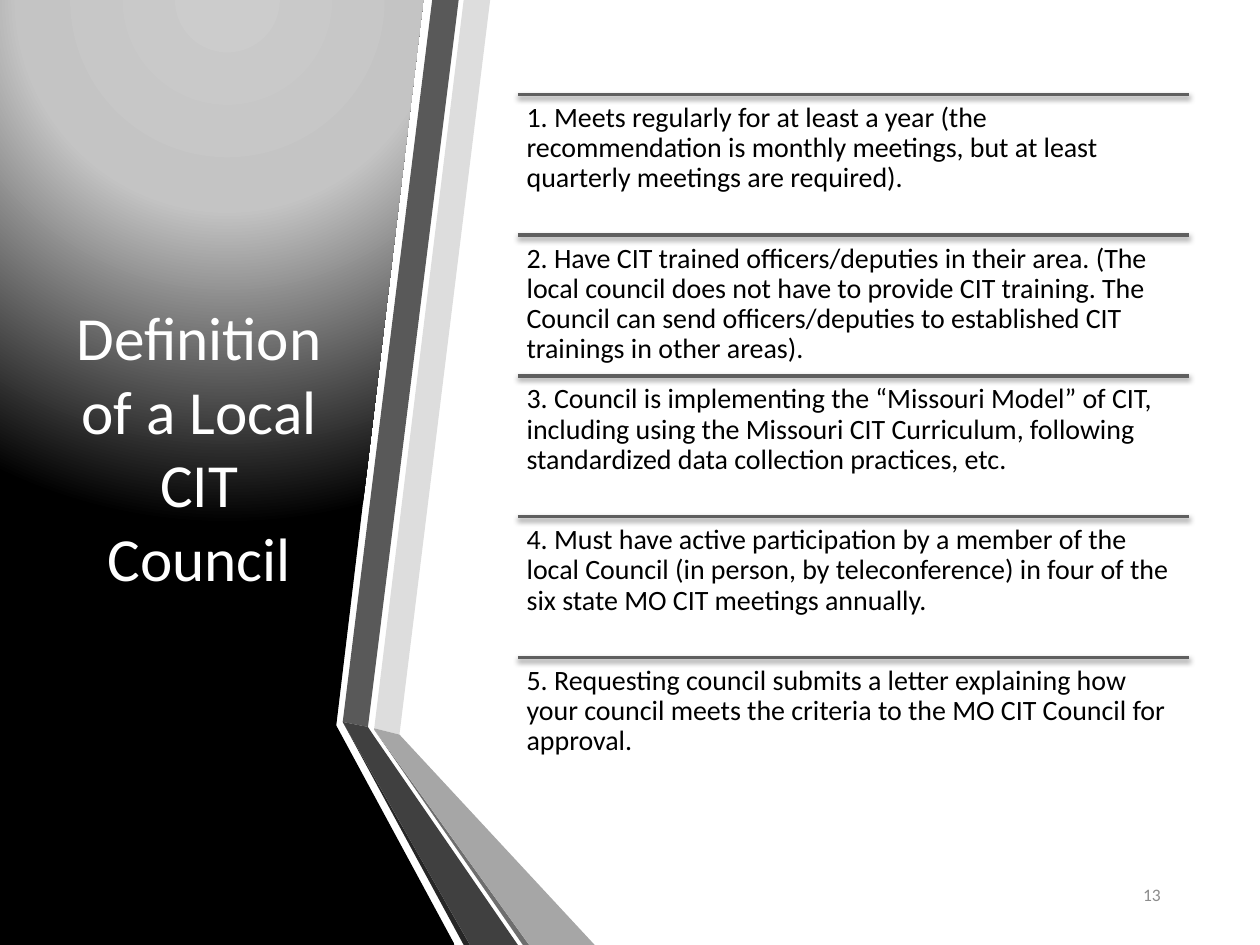
from pptx import Presentation
from pptx.dml.color import RGBColor as Rgb
from pptx.enum.shapes import MSO_CONNECTOR as Link
from pptx.enum.text import MSO_ANCHOR as Anchor, PP_ALIGN as Align
from pptx.oxml import parse_xml
from pptx.oxml.ns import nsdecls
from pptx.util import Inches, Pt

TITLE = "Definition of a Local CIT Council"
ITEMS = [
    "1. Meets regularly for at least a year (the recommendation is monthly meetings, "
    "but at least quarterly meetings are required).",
    "2. Have CIT trained officers/deputies in their area. (The local council does not "
    "have to provide CIT training. The Council can send officers/deputies to "
    "established CIT trainings in other areas).",
    "3. Council is implementing the “Missouri Model” of CIT, including using the "
    "Missouri CIT Curriculum, following standardized data collection practices, etc.",
    "4. Must have active participation by a member of the local Council (in person, by "
    "teleconference) in four of the six state MO CIT meetings annually.",
    "5. Requesting council submits a letter explaining how your council meets the "
    "criteria to the MO CIT Council for approval.",
]
PAGE = "13"

WIDE, HIGH = 10, 7.5
LEFT, TOP, SPAN, ROW = 4.11, 0.75, 5.33, 1.117
UNIT = Inches(0.01)
END = 750

PANEL = [(264, 0), (336, 0), (267, 575), (267, 576), (361, END), (0, END), (0, 0)]
BANDS = [
    ("DDDDDD", [(297, 578), (317, 583), (389, 0), (368, 0)]),
    ("595959", [(364, 0), (343, 0), (272, 573), (292, 577)]),
    ("262626", [(272, 573), (368, END), (373, END)]),
    ("6E6E6E", [(297, 579), (415, END), (420, END)]),
    ("A6A6A6", [(297, 579), (420, END), (472, END), (317, 583), (297, 578)]),
    ("404040", [(411, END), (296, 583), (292, 577), (272, 573), (373, END)]),
]
STOPS = [(0, "CCCCCC"), (40, "C4C4C4"), (100, "000000")]


def tint(color):
    return Rgb.from_string(color)


def draw(shapes, points, color):
    pen = shapes.build_freeform(*points[0], scale=UNIT)
    pen.add_line_segments(points[1:], close=True)
    form = pen.convert_to_shape()
    form.shadow.inherit = False
    form.fill.solid()
    form.fill.fore_color.rgb = tint(color)
    form.line.fill.background()
    return form


def glow(form):
    stops = "".join(
        f'<a:gs pos="{at * 1000}"><a:srgbClr val="{color}"/></a:gs>' for at, color in STOPS
    )
    fill = parse_xml(
        f'<a:gradFill {nsdecls("a")} rotWithShape="1"><a:gsLst>{stops}</a:gsLst>'
        '<a:path path="circle"><a:fillToRect l="50000" t="-80000" r="50000" b="180000"/>'
        "</a:path></a:gradFill>"
    )
    props = form.fill._xPr
    props.replace(props.find("{*}solidFill"), fill)


def write(shapes, box, text, size, color, align=Align.LEFT, anchor=Anchor.TOP, inset=None):
    frame = shapes.add_textbox(*map(Inches, box)).text_frame
    frame.word_wrap = True
    frame.vertical_anchor = anchor
    if inset is not None:
        frame.margin_left = frame.margin_right = Inches(inset)
        frame.margin_top = frame.margin_bottom = Inches(inset)
    para = frame.paragraphs[0]
    para.text = text
    para.alignment = align
    font = para.runs[0].font
    font.name, font.size, font.color.rgb = "Calibri", Pt(size), tint(color)
    return para


def rule(shapes, y):
    line = shapes.add_connector(Link.STRAIGHT, *map(Inches, (LEFT, y, LEFT + SPAN, y)))
    line.line.color.rgb = tint("5F5F5F")
    line.line.width = Pt(2)
    line._element.spPr.append(parse_xml(
        f'<a:effectLst {nsdecls("a")}><a:outerShdw blurRad="{Pt(3.1)}" dist="{Pt(1.6)}" '
        'dir="5400000" rotWithShape="0"><a:srgbClr val="000000"><a:alpha val="38000"/>'
        "</a:srgbClr></a:outerShdw></a:effectLst>"
    ))


def main():
    deck = Presentation()
    deck.slide_width, deck.slide_height = Inches(WIDE), Inches(HIGH)
    shapes = deck.slides.add_slide(deck.slide_layouts[6]).shapes

    glow(draw(shapes, PANEL, "000000"))
    for color, points in BANDS:
        draw(shapes, points, color)

    write(shapes, (0.44, TOP, 2.28, 5 * ROW), TITLE, 35, "FFFFFF", Align.CENTER, Anchor.MIDDLE)
    write(shapes, (8.42, 6.9, 0.89, 0.4), PAGE, 10, "8C8C8C", Align.RIGHT, Anchor.MIDDLE)

    for i, item in enumerate(ITEMS):
        y = TOP + i * ROW
        rule(shapes, y)
        para = write(shapes, (LEFT, y, SPAN, ROW), item, 16, "000000", inset=0.07)
        para.line_spacing = 0.9

    deck.save("out.pptx")


if __name__ == "__main__":
    main()
